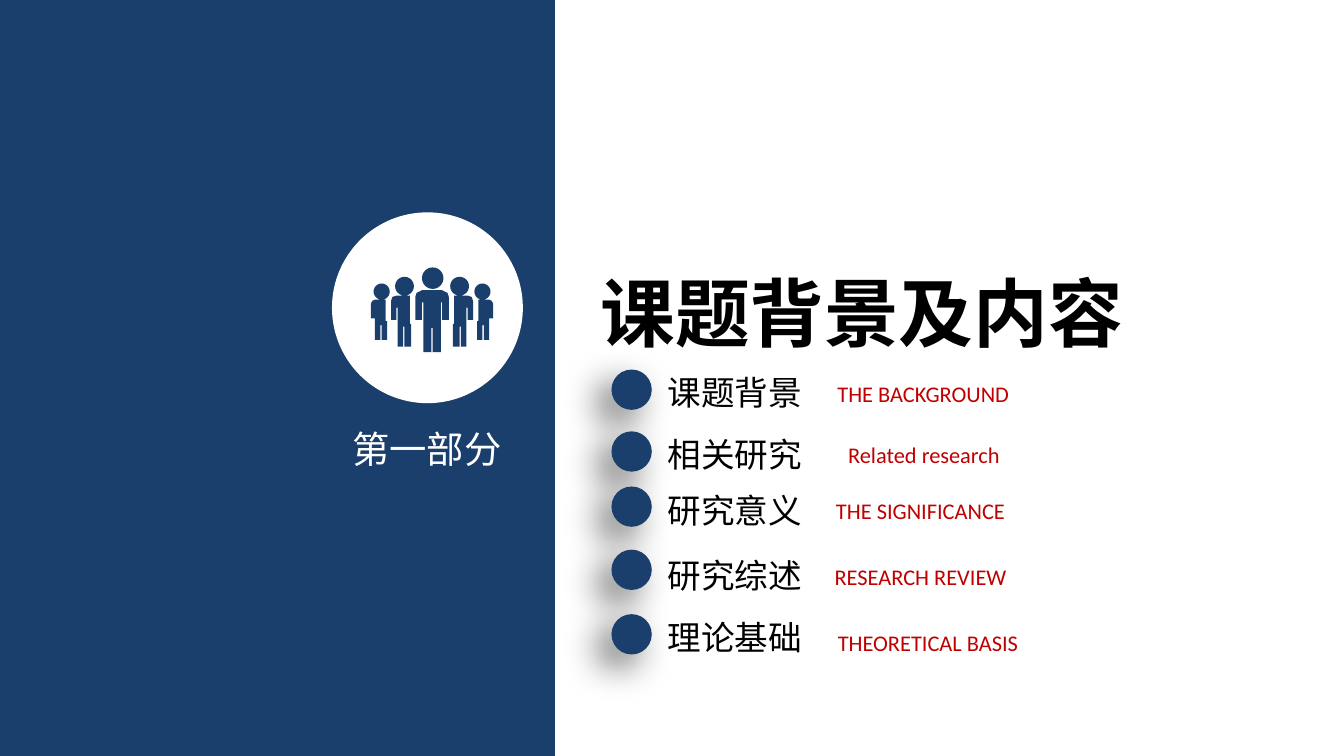
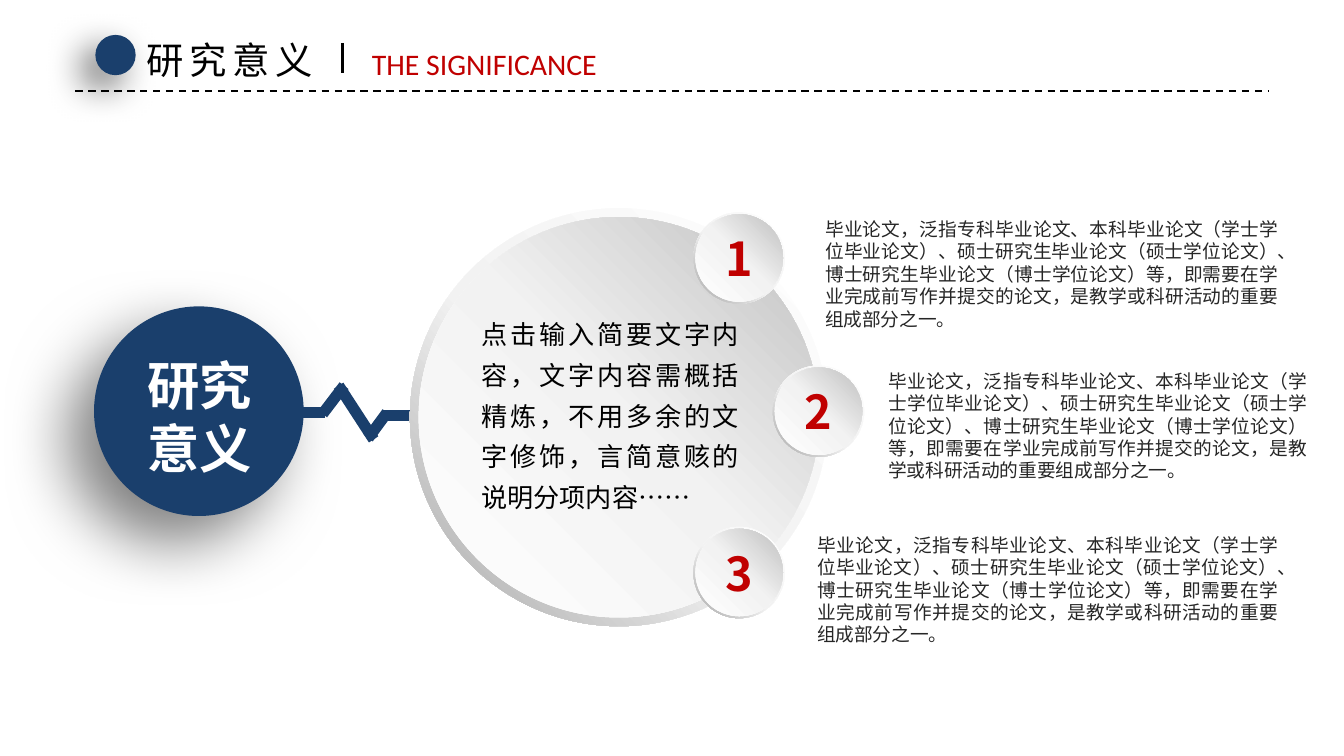
from copy import deepcopy
from math import cos, pi, sin

from lxml import etree
from pptx import Presentation
from pptx.dml.color import RGBColor
from pptx.enum.dml import MSO_LINE
from pptx.enum.shapes import MSO_CONNECTOR, MSO_SHAPE
from pptx.enum.text import MSO_ANCHOR, MSO_AUTO_SIZE, PP_ALIGN
from pptx.oxml.ns import qn
from pptx.util import Inches, Pt

RECT, OVAL, DONUT = MSO_SHAPE.RECTANGLE, MSO_SHAPE.OVAL, MSO_SHAPE.DONUT
STRAIGHT, DASH = MSO_CONNECTOR.STRAIGHT, MSO_LINE.DASH
LEFT, CENTER, JUSTIFY = PP_ALIGN.LEFT, PP_ALIGN.CENTER, PP_ALIGN.JUSTIFY
MIDDLE, GROW = MSO_ANCHOR.MIDDLE, MSO_AUTO_SIZE.SHAPE_TO_FIT_TEXT

NAVY = RGBColor(0x1A, 0x3F, 0x6C)
RED = RGBColor(0xC0, 0x00, 0x00)
BLACK = RGBColor(0x00, 0x00, 0x00)
CHARCOAL = RGBColor(0x26, 0x26, 0x26)
WHITE = RGBColor(0xFF, 0xFF, 0xFF)
PALE = RGBColor(0xF2, 0xF2, 0xF2)
SILVER = RGBColor(0xBF, 0xBF, 0xBF)
GREY = RGBColor(0xA6, 0xA6, 0xA6)

HAN, LATIN = "Noto Sans CJK SC", "Calibri"
SLIDE_W = 10
SLIDE_H = SLIDE_W * 9 / 16
DOT = 0.3
RIM = ((0, WHITE), (0.55, PALE), (1, GREY))
FACE = ((0, WHITE), (0.51, PALE), (1, SILVER))

# Contents row: dot top, label top, label, gloss box (left, top, width), gloss
SECTIONS = [
    (2.75, 2.72, "课题背景", (6.05, 2.78, 1.64), "THE BACKGROUND"),
    (3.21, 3.18, "相关研究", (6.15, 3.23, 1.45), "Related research"),
    (3.62, 3.6, "研究意义", (6.05, 3.65, 1.6), "THE SIGNIFICANCE"),
    (4.09, 4.08, "研究综述", (6.05, 4.14, 1.6), "RESEARCH REVIEW"),
    (4.57, 4.54, "理论基础", (6.05, 4.63, 1.71), "THEORETICAL BASIS"),
]

# People icon, relative to its own corner: the left half is mirrored
ICON_W = 0.91
MIDDLE_BODY = [(0.33, 0.22), (0.34, 0.19), (0.38, 0.17), (0.53, 0.17), (0.57, 0.19),
               (0.58, 0.22), (0.58, 0.39), (0.53, 0.39), (0.53, 0.26), (0.52, 0.26),
               (0.52, 0.63), (0.46, 0.63), (0.46, 0.45), (0.45, 0.45), (0.45, 0.63),
               (0.39, 0.63), (0.39, 0.26), (0.38, 0.26), (0.38, 0.39), (0.33, 0.39)]
SIDE_BODIES = [
    [(0.15, 0.25), (0.16, 0.22), (0.19, 0.21), (0.29, 0.21), (0.29, 0.42), (0.3, 0.42),
     (0.3, 0.59), (0.25, 0.59), (0.25, 0.44), (0.24, 0.44), (0.24, 0.59), (0.2, 0.59),
     (0.2, 0.3), (0.19, 0.3), (0.19, 0.39), (0.15, 0.39)],
    [(0, 0.27), (0.01, 0.25), (0.03, 0.24), (0.11, 0.24), (0.11, 0.4), (0.12, 0.4),
     (0.12, 0.54), (0.08, 0.54), (0.08, 0.43), (0.07, 0.43), (0.07, 0.54),
     (0.03, 0.54), (0.03, 0.38), (0, 0.38)],
]
MIDDLE_HEAD = (0.46, 0.08, 0.08)
SIDE_HEADS = [(0.25, 0.14, 0.07), (0.08, 0.18, 0.06)]

THESIS = ("毕业论文，泛指专科毕业论文、本科毕业论文（学士学位毕业论文）、硕士研究生毕业论文"
          "（硕士学位论文）、博士研究生毕业论文（博士学位论文）等，即需要在学业完成前写作并提交的论文，"
          "是教学或科研活动的重要组成部分之一。")
SUMMARY = ("点击输入简要文字内容，文字内容需概括精炼，不用多余的文字修饰，"
           "言简意赅的说明分项内容……")
# Numbered point, relative to the dial: knob corner, then text left, top, width
POINTS = [
    ((2.11, 0.03), (3.09, 0.07, 3.37)),
    ((2.7, 1.17), (3.56, 1.2, 3.12)),
    ((2.11, 2.37), (3.03, 2.42, 3.43)),
]


def style(frame, lines, size, color, font=HAN, bold=False, align=LEFT,
          tracking=0, spacing=None):
    frame.text = "\n".join(lines)
    for paragraph in frame.paragraphs:
        paragraph.alignment = align
        if spacing:
            paragraph.line_spacing = spacing
        paragraph.font.size = Pt(size)
        paragraph.font.bold = bold
        paragraph.font.name = font
        paragraph.font.color.rgb = color
        defaults = paragraph._p.pPr.find(qn("a:defRPr"))
        etree.SubElement(defaults, qn("a:ea")).set("typeface", font)
        if tracking:
            defaults.set("spc", str(tracking * 100))


def add_text(slide, box, lines, size, color, wrap=False, flush=False, **look):
    frame = slide.shapes.add_textbox(*map(Inches, box)).text_frame
    frame.word_wrap = wrap
    frame.auto_size = GROW
    if flush:
        frame.margin_left = frame.margin_right = 0
        frame.margin_top = frame.margin_bottom = 0
    style(frame, lines, size, color, **look)


def add_plain(slide, preset, box, color=None):
    shape = slide.shapes.add_shape(preset, *map(Inches, box))
    shape.shadow.inherit = False
    shape.line.fill.background()
    if color is not None:
        shape.fill.solid()
        shape.fill.fore_color.rgb = color
    return shape


def cast_shadow(shape, opacity, blur, distance):
    """Throw a black shadow to the lower left."""
    effects = shape._element.spPr.find(qn("a:effectLst"))
    shadow = etree.SubElement(effects, qn("a:outerShdw"), blurRad=str(Pt(blur)),
                              dist=str(Pt(distance)), dir=str(135 * 60000),
                              algn="tr", rotWithShape="0")
    black = etree.SubElement(shadow, qn("a:srgbClr"), val="000000")
    etree.SubElement(black, qn("a:alpha"), val=str(opacity * 1000))


def shade(shape, stops, angle):
    shape.fill.gradient()
    shape.fill.gradient_angle = angle
    stop_list = shape._element.spPr.find(".//" + qn("a:gsLst"))
    stop_list.insert(1, deepcopy(stop_list[0]))
    for stop, (position, color) in zip(shape.fill.gradient_stops, stops):
        stop.position = position
        stop.color.rgb = color


def add_line(slide, start, end, color, width, dash=None):
    line = slide.shapes.add_connector(STRAIGHT, *map(Inches, (*start, *end)))
    line.line.color.rgb = color
    line.line.width = Pt(width)
    if dash:
        line.line.dash_style = dash
    etree.SubElement(line._element.spPr, qn("a:effectLst"))


def add_dot(slide, left, top):
    dot = add_plain(slide, OVAL, (left, top, DOT, DOT), NAVY)
    cast_shadow(dot, 60, 20, 10)


def add_button(slide, left, top, size):
    """Add a raised grey disc inside a rim and return the disc."""
    rim = add_plain(slide, DONUT, (left, top, size, size))
    rim.adjustments[0] = 0.049
    shade(rim, RIM, 225)
    inset = size * 0.021
    inner = size - 2 * inset
    face = add_plain(slide, OVAL, (left + inset, top + inset, inner, inner))
    shade(face, FACE, 45)
    return face


def head_outline(x, y, radius, steps=24):
    turns = [2 * pi * step / steps for step in range(steps)]
    return [(x + radius * cos(turn), y + radius * sin(turn)) for turn in turns]


def add_people(slide, left, top):
    side = SIDE_BODIES + [head_outline(*head) for head in SIDE_HEADS]
    mirrored = [[(ICON_W - x, y) for x, y in outline] for outline in side]
    outlines = [MIDDLE_BODY, head_outline(*MIDDLE_HEAD), *side, *mirrored]
    builder = None
    for outline in outlines:
        first, *rest = [(Inches(left + x), Inches(top + y)) for x, y in outline]
        if builder is None:
            builder = slide.shapes.build_freeform(*first)
        else:
            builder.move_to(*first)
        builder.add_line_segments(rest, close=True)
    people = builder.convert_to_shape()
    people.shadow.inherit = False
    people.fill.solid()
    people.fill.fore_color.rgb = NAVY
    people.line.fill.background()


def part_band(slide, left, top, width, height):
    add_plain(slide, RECT, (left, top, width, height), NAVY)
    add_text(slide, (left + 2.62, top + 3.17, 1.36, 0.34), ["第一部分"], 20, WHITE,
             wrap=True, flush=True)
    add_plain(slide, OVAL, (left + 2.47, top + 1.58, 1.42, 1.42), WHITE)
    add_people(slide, left + 2.76, top + 1.99)


def contents_row(slide, left, dot_top, label_top, label, gloss_box, gloss):
    add_text(slide, (left + 0.32, label_top, 1.21, 0.4), [label], 18, BLACK)
    add_text(slide, (*gloss_box, 0.3), [gloss], 12, RED, font=LATIN, align=CENTER)
    add_dot(slide, left, dot_top)


def title_bar(slide, left, top, width, title, gloss):
    add_line(slide, (left, top + 0.45), (left + width, top + 0.45), BLACK, 1, DASH)
    add_dot(slide, left + 0.15, top + 0.03)
    add_text(slide, (left + 0.43, top, 1.49, 0.44), [title], 20, BLACK, tracking=3)
    add_text(slide, (left + 2.01, top + 0.06, 2.07, 0.37), [gloss], 16, RED,
             font=LATIN, align=CENTER)
    add_line(slide, (left + 1.99, top + 0.09), (left + 1.99, top + 0.31), BLACK, 1.5)


def topic_disc(slide, left, top, size):
    disc = add_plain(slide, OVAL, (left, top, size, size), NAVY)
    cast_shadow(disc, 50, 35, 20)
    add_text(slide, (left + 0.39, top + 0.35, 0.79, 0.94), ["研究", "意义"], 28, WHITE,
             flush=True, bold=True, align=CENTER)


def pulse(slide, left, top):
    strokes = [((0, 0.2), (0.49, 0.2)), ((0.93, 0.22), (1.34, 0.22)),
               ((0.47, 0.21), (0.63, 0)), ((0.81, 0.39), (0.95, 0.2)),
               ((0.85, 0.4), (0.59, 0))]
    for (x1, y1), (x2, y2) in strokes:
        add_line(slide, (left + x1, top + y1), (left + x2, top + y2), NAVY, 6)


def points_dial(slide, left, top, size):
    add_button(slide, left, top, size)
    add_text(slide, (left + 0.53, top + 0.75, 1.92, 1.5), [SUMMARY], 14, BLACK,
             wrap=True, flush=True, align=JUSTIFY, spacing=1.3)
    for number, ((knob_x, knob_y), (x, y, width)) in enumerate(POINTS, 1):
        knob = add_button(slide, left + knob_x, top + knob_y, 0.68)
        knob.text_frame.vertical_anchor = MIDDLE
        style(knob.text_frame, [str(number)], 25, RED, bold=True, align=CENTER)
        add_text(slide, (left + x, top + y, width, 0.84), [THESIS], 10, CHARCOAL,
                 wrap=True, flush=True, align=JUSTIFY)


def section_slide(slide):
    part_band(slide, 0, 0, 4.13, SLIDE_H)
    add_text(slide, (4.37, 1.94, 4.14, 0.77), ["课题背景及内容"], 40, BLACK, bold=True)
    for section in SECTIONS:
        contents_row(slide, 4.55, *section)


def significance_slide(slide):
    topic_disc(slide, 0.7, 2.28, 1.56)
    pulse(slide, 1.93, 2.87)
    points_dial(slide, 3.05, 1.55, 3.11)
    title_bar(slide, 0.56, 0.23, 8.88, "研究意义", "THE SIGNIFICANCE")


def main():
    deck = Presentation()
    deck.slide_width, deck.slide_height = Inches(SLIDE_W), Inches(SLIDE_H)
    blank = deck.slide_layouts[6]
    for build in (section_slide, significance_slide):
        build(deck.slides.add_slide(blank))
    deck.save("out.pptx")


if __name__ == "__main__":
    main()
